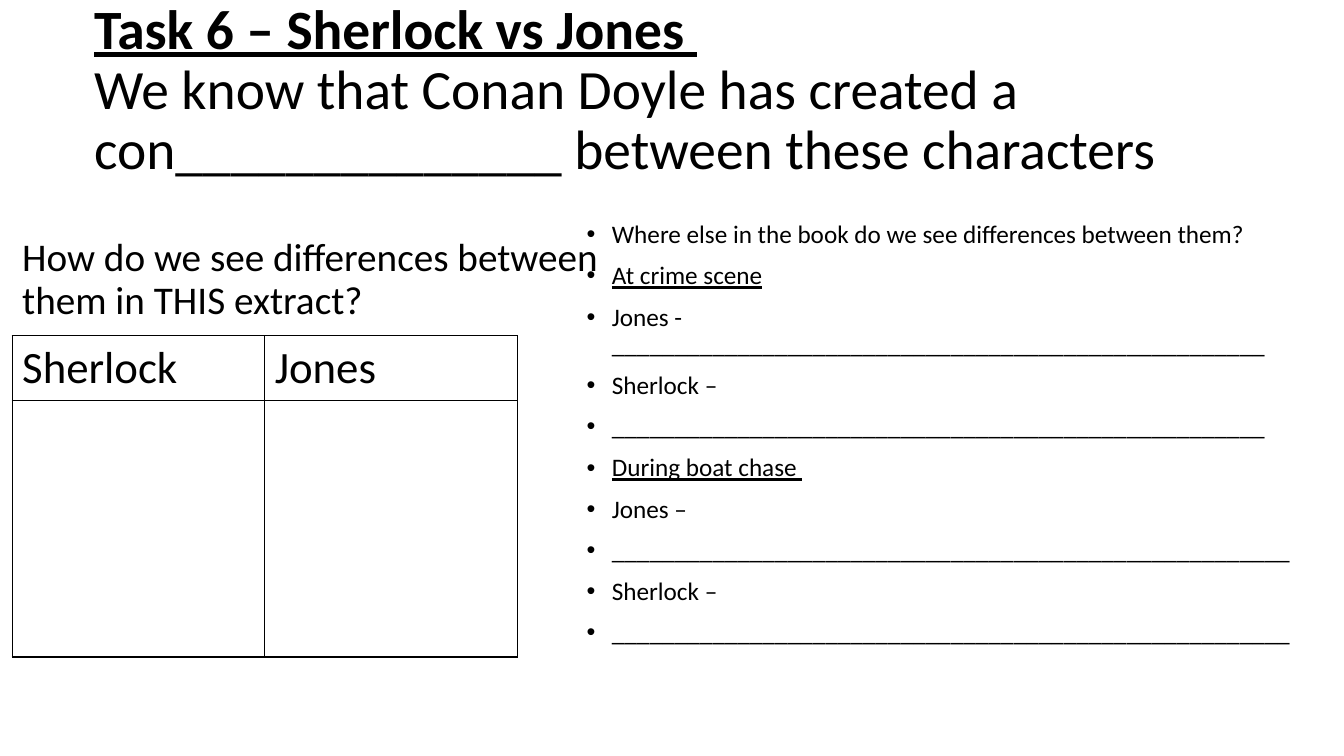
from lxml import etree
from pptx import Presentation
from pptx.dml.color import RGBColor
from pptx.enum.text import MSO_ANCHOR, MSO_AUTO_SIZE, PP_ALIGN
from pptx.oxml.ns import qn
from pptx.util import Inches, Pt

LEFT = PP_ALIGN.LEFT
TOP, MIDDLE = MSO_ANCHOR.TOP, MSO_ANCHOR.MIDDLE
NO_AUTOFIT = MSO_AUTO_SIZE.NONE
TWO_CONTENT_LAYOUT = 3

HEADING = "Task 6 – Sherlock vs Jones "
STATEMENT = ("We know that Conan Doyle has created a con" + "_" * 14
             + " between these characters")
EXTRACT_QUESTION = "How do we see differences between them in THIS extract?"
SHORT_BLANK = "_" * 52
LONG_BLANK = "_" * 54
SCENES = ("At crime scene", "During boat chase ")
BOOK_QUESTIONS = [
    "Where else in the book do we see differences between them?",
    SCENES[0], "Jones - " + SHORT_BLANK, "Sherlock –", SHORT_BLANK,
    SCENES[1], "Jones –", LONG_BLANK, "Sherlock –", LONG_BLANK,
]


def colour(hex_string):
    return RGBColor.from_string(hex_string)


class Worksheet:
    """Holds the style and the current slide; areas are percentages of the slide."""

    font_name = "Calibri"
    ink = "000000"
    line_spacing = 0.9
    paragraph_gap = Pt(10)
    bullet_indent = Inches(0.25)
    border_width = Pt(1)

    def __init__(self, deck):
        self.width, self.height = deck.slide_width, deck.slide_height
        self.page = deck.slides.add_slide(deck.slide_layouts[TWO_CONTENT_LAYOUT])

    def across(self, percent):
        return round(self.width * percent / 100)

    def down(self, percent):
        return round(self.height * percent / 100)

    def area(self, left, top, width, height):
        return self.across(left), self.down(top), self.across(width), self.down(height)

    def format_runs(self, para, size, underline=False):
        for span in para.runs:
            span.font.name = self.font_name
            span.font.size = Pt(size)
            span.font.color.rgb = colour(self.ink)
            span.font.underline = underline

    def place(self, index, area, anchor):
        """Moves a placeholder to an area and returns its text frame."""
        box = self.page.placeholders[index]
        box.left, box.top, box.width, box.height = self.area(*area)
        frame = box.text_frame
        frame.auto_size = NO_AUTOFIT
        frame.word_wrap = True
        frame.vertical_anchor = anchor
        return frame

    def title(self, area, heading, statement, size):
        para = self.place(0, area, MIDDLE).paragraphs[0]
        para.text = f"{heading}\v{statement}"
        para.alignment = LEFT
        para.line_spacing = self.line_spacing
        self.format_runs(para, size)
        para.runs[0].font.bold = True
        para.runs[0].font.underline = True

    def body(self, index, area, lines, size, bulleted=False, underlined=()):
        frame = self.place(index, area, TOP)
        frame.text = "\n".join(lines)
        for para in frame.paragraphs:
            para.line_spacing = self.line_spacing
            para.space_before = self.paragraph_gap
            self.format_runs(para, size, para.text in underlined)
            self.set_bullet(para, bulleted)

    def set_bullet(self, para, bulleted):
        properties = para._p.get_or_add_pPr()
        indent = self.bullet_indent if bulleted else 0
        properties.set("marL", str(indent))
        properties.set("indent", str(-indent))
        if bulleted:
            etree.SubElement(properties, qn("a:buFont"), typeface="Arial")
            etree.SubElement(properties, qn("a:buChar"), char="•")
        else:
            etree.SubElement(properties, qn("a:buNone"))

    def table(self, area, headings, row_shares, size):
        """Draws a headed table; row_shares are percentages of the slide height."""
        frame = self.page.shapes.add_table(
            len(row_shares), len(headings), *self.area(*area))
        grid = frame.table
        grid.first_row = grid.horz_banding = False
        for row, share in zip(grid.rows, row_shares):
            row.height = self.down(share)
        for cell, heading in zip(grid.rows[0].cells, headings):
            cell.text = heading
            self.format_runs(cell.text_frame.paragraphs[0], size)
        for cell in grid.iter_cells():
            cell.fill.background()
            self.add_borders(cell)

    def add_borders(self, cell):
        properties = cell._tc.get_or_add_tcPr()
        for position, side in enumerate(("lnL", "lnR", "lnT", "lnB")):
            line = etree.Element(qn(f"a:{side}"), w=str(self.border_width))
            fill = etree.SubElement(line, qn("a:solidFill"))
            etree.SubElement(fill, qn("a:srgbClr"), val=self.ink)
            properties.insert(position, line)


def main():
    deck = Presentation()
    deck.slide_width, deck.slide_height = Inches(13.33), Inches(7.5)
    sheet = Worksheet(deck)
    sheet.title((6.25, 2.4, 86.25, 19.33), HEADING, STATEMENT, size=39.6)
    sheet.body(1, (0.9, 30.8, 44.35, 63.5), [EXTRACT_QUESTION], size=28)
    sheet.body(2, (42.9, 28.67, 57.1, 71.33), BOOK_QUESTIONS, size=18,
               bulleted=True, underlined=SCENES)
    sheet.table((0.9, 44.4, 37.6, 42.5), ("Sherlock", "Jones"),
                row_shares=(8.6, 33.9), size=32)
    deck.save("out.pptx")


if __name__ == "__main__":
    main()
